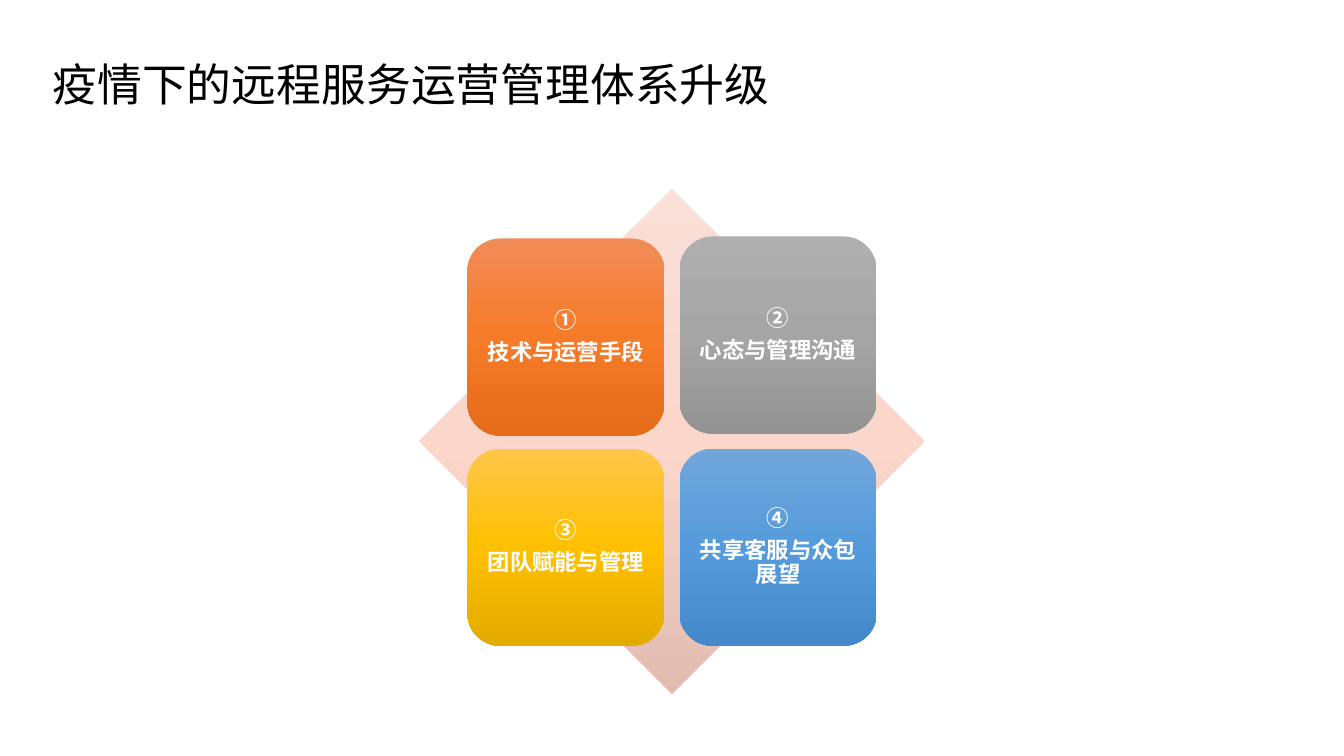
import copy

import lxml.etree
import pptx
import pptx.dml.color
import pptx.enum.shapes
import pptx.enum.text
import pptx.oxml.ns
import pptx.util

Cm = pptx.util.Cm
Pt = pptx.util.Pt
KIND = pptx.enum.shapes.MSO_SHAPE
ALIGN = pptx.enum.text.PP_ALIGN
MID = pptx.enum.text.MSO_ANCHOR.MIDDLE
FIT = pptx.enum.text.MSO_AUTO_SIZE.NONE
qn = pptx.oxml.ns.qn

FACE = "Noto Sans CJK SC"
BACK = ("FAE0D8", "FAD6CB", "E2BCB1")
# Each tile: mark, label, gradient from top to bottom, downward nudge in cm
TILES = [
    ("①", "技术与运营手段", ("F18C57", "F67B28", "E56C19"), 0.05),
    ("②", "心态与管理沟通", ("AFAFAF", "A5A5A5", "939393"), 0),
    ("③", "团队赋能与管理", ("FFC64B", "FFC000", "E3AB00"), 0),
    ("④", "共享客服与众包展望", ("71A6DB", "559BDB", "448ACA"), 0),
]


def paint(color, tone):
    color.rgb = pptx.dml.color.RGBColor.from_string(tone)


def apply(item, form):
    for name, value in form.items():
        setattr(item, name, value)


def write(frame, lines, tone, form, font, para):
    """Fill a text frame, one paragraph per line."""
    apply(frame, form)
    frame.text = "\n".join(lines)
    for part in frame.paragraphs:
        apply(part, para)
        for run in part.runs:
            apply(run.font, font)
            paint(run.font.color, tone)
            # Chinese text takes the East Asian face
            props = run.font._element
            lxml.etree.SubElement(props, qn("a:ea")).set("typeface", FACE)


def shade(shape, tones):
    """Give a shape an even top-to-bottom gradient with no line."""
    shape.shadow.inherit = False
    shape.line.fill.background()
    shape.fill.gradient()
    shape.fill.gradient_angle = 270
    first = shape._element.spPr.find(".//" + qn("a:gs"))
    first.addnext(copy.deepcopy(first))
    for i, (stop, tone) in enumerate(zip(shape.fill.gradient_stops, tones)):
        stop.position = i / 2
        paint(stop.color, tone)


def head(slide, left, top, width, height):
    """Title line."""
    title = slide.shapes.title
    apply(title, dict(left=Cm(left), top=Cm(top),
                      width=Cm(width), height=Cm(height)))
    write(title.text_frame, ["疫情下的远程服务运营管理体系升级"], "000000",
          dict(auto_size=FIT, word_wrap=True, vertical_anchor=MID),
          dict(name=FACE, size=Pt(32)),
          dict(alignment=ALIGN.LEFT, line_spacing=0.9))


def matrix(slide, left, top, side):
    """Diamond with a two-by-two grid of tiles on it."""
    back = slide.shapes.add_shape(
        KIND.DIAMOND, Cm(left), Cm(top), Cm(side), Cm(side))
    shade(back, BACK)

    edge, size, step = side * 0.095, side * 0.39, side * 0.42
    pad = Cm(0.17)
    for i, (mark, label, tones, nudge) in enumerate(TILES):
        row, col = divmod(i, 2)
        tile = slide.shapes.add_shape(
            KIND.ROUNDED_RECTANGLE,
            Cm(left + edge + col * step), Cm(top + edge + row * step + nudge),
            Cm(size), Cm(size))
        shade(tile, tones)
        write(tile.text_frame, [mark, label], "FFFFFF",
              dict(word_wrap=True, vertical_anchor=MID, margin_left=pad,
                   margin_right=pad, margin_top=pad, margin_bottom=pad),
              dict(name=FACE, size=Pt(16), bold=True),
              dict(alignment=ALIGN.CENTER, line_spacing=0.9,
                   space_after=Pt(5.6)))


def main():
    deck = pptx.Presentation()
    apply(deck, dict(slide_width=Cm(33.87), slide_height=Cm(19.05)))
    slide = deck.slides.add_slide(deck.slide_layouts[5])
    head(slide, 1.07, 1.07, 29.21, 2.24)
    matrix(slide, 10.57, 4.75, 12.73)
    deck.save("out.pptx")


if __name__ == "__main__":
    main()
